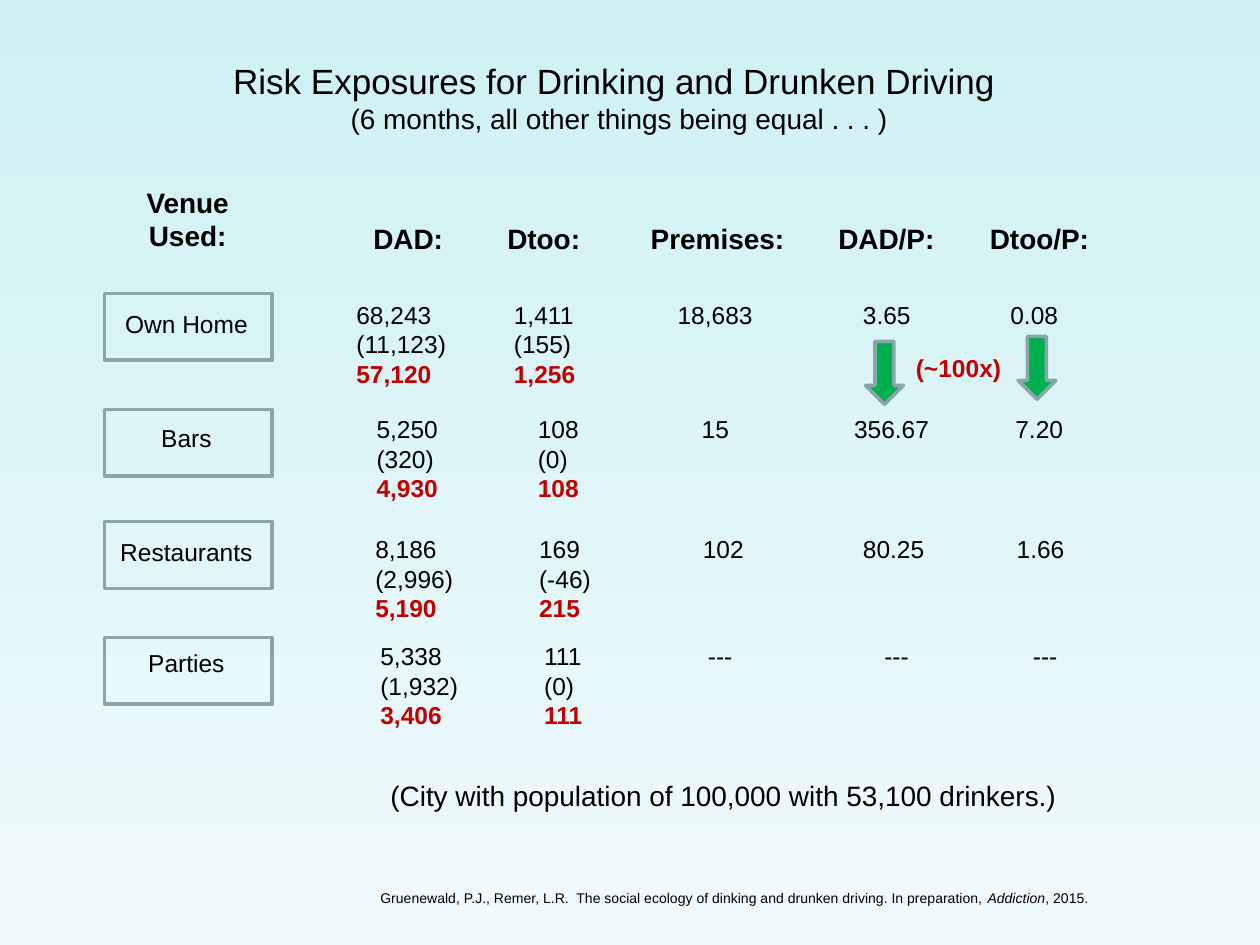
from pptx import Presentation
from pptx.dml.color import RGBColor
from pptx.enum.shapes import MSO_SHAPE as Shape
from pptx.enum.text import MSO_ANCHOR as Anchor, MSO_AUTO_SIZE as AutoSize, PP_ALIGN as Align
from pptx.util import Inches, Pt

BLACK, RED, GREEN, GREY = "000000", "C00000", "00B050", "8AA6A8"


def rgb(color):
    return RGBColor.from_string(color)


def write(box, text, size=14, color=BLACK, bold=False, italic=False,
          align=Align.LEFT, spacing=None, wrap=False, same_line=False):
    """Append text to a box, in a new paragraph unless same_line is set."""
    frame = box.text_frame
    frame.word_wrap = wrap
    frame.auto_size = AutoSize.SHAPE_TO_FIT_TEXT
    para = frame.paragraphs[-1]
    if para.runs and not same_line:
        para = frame.add_paragraph()
    para.alignment = align
    para.space_before = Pt(0)
    if spacing:
        para.line_spacing = Pt(spacing)
    span = para.add_run()
    span.text = text
    span.font.name = "Arial"
    span.font.size = Pt(size)
    span.font.bold = bold
    span.font.italic = italic
    span.font.color.rgb = rgb(color)


deck = Presentation()
deck.slide_width, deck.slide_height = Inches(10), Inches(7.5)
page = deck.slides.add_slide(deck.slide_layouts[5])
shapes = page.shapes

backdrop = page.background.fill
backdrop.gradient()
backdrop.gradient_angle = 270
for stop, color in zip(backdrop.gradient_stops, ["CEF1F4", "EFFAFB"]):
    stop.color.rgb = rgb(color)

title = shapes.title
title.left, title.top = Inches(1.75), Inches(0.42)
title.width, title.height = Inches(6.33), Inches(0.71)
title.text_frame.vertical_anchor = Anchor.TOP
write(title, "Risk Exposures for Drinking and Drunken Driving", size=20, wrap=True)
write(title, "(6 months, all other things being equal . . . )", size=16,
      align=Align.CENTER, wrap=True)

# Column headings: text, left, width
headings = [("DAD:", 2.86, 0.76), ("Dtoo:", 3.92, 0.79), ("Premises:", 5.06, 1.27),
            ("DAD/P:", 6.55, 0.97), ("Dtoo/P:", 7.75, 1)]
for text, left, width in headings:
    heading = shapes.add_textbox(Inches(left), Inches(1.71), Inches(width), Inches(0.37))
    write(heading, text, size=16, bold=True, align=Align.CENTER)

venue_heading = shapes.add_textbox(Inches(1.06), Inches(1.42), Inches(0.86), Inches(0.64))
for text in ["Venue", "Used:"]:
    write(venue_heading, text, size=16, bold=True, align=Align.CENTER)

# Venue, tops of frame, label and figures, then the figures: left, width, lines
venues = [
    ("Own Home", 2.33, 2.43, 2.33, [
        (2.73, 0.91, ["68,243", "(11,123)", "57,120"]),
        (3.98, 0.69, ["1,411", "(155)", "1,256"]),
        (5.28, 0.8, ["18,683"]), (6.75, 0.58, ["3.65"]), (7.92, 0.58, ["0.08"])]),
    ("Bars", 3.25, 3.33, 3.24, [
        (2.89, 0.69, ["5,250", "(320)", "4,930"]),
        (4.17, 0.53, ["108", "(0)", "108"]),
        (5.47, 0.42, ["15"]), (6.68, 0.8, ["356.67"]), (7.96, 0.58, ["7.20"])]),
    ("Restaurants", 4.14, 4.24, 4.19, [
        (2.88, 0.82, ["8,186", "(2,996)", "5,190"]),
        (4.18, 0.61, ["169", "(-46)", "215"]),
        (5.48, 0.53, ["102"]), (6.75, 0.69, ["80.25"]), (7.97, 0.58, ["1.66"])]),
    ("Parties", 5.06, 5.12, 5.04, [
        (2.92, 0.82, ["5,338", "(1,932)", "3,406"]),
        (4.22, 0.51, ["111", "(0)", "111"]),
        (5.52, 0.4, ["---"]), (6.92, 0.4, ["---"]), (8.1, 0.4, ["---"])]),
]
outlines = [(Shape.DOWN_ARROW, 6.87, 2.71, 0.3, 0.5, GREEN),
            (Shape.DOWN_ARROW, 8.08, 2.67, 0.3, 0.5, GREEN)]
outlines += [(Shape.RECTANGLE, 0.83, venue[1], 1.33, 0.53, None) for venue in venues]
for kind, left, top, width, height, color in outlines:
    outline = shapes.add_shape(kind, Inches(left), Inches(top), Inches(width), Inches(height))
    outline.shadow.inherit = False
    outline.line.color.rgb = rgb(GREY)
    outline.line.width = Pt(2)
    if color:
        outline.fill.solid()
        outline.fill.fore_color.rgb = rgb(color)
    else:
        outline.fill.background()

for venue, _, label_top, figures_top, figures in venues:
    label = shapes.add_textbox(Inches(0.85), Inches(label_top), Inches(1.26), Inches(0.31))
    write(label, venue, align=Align.CENTER, spacing=15)
    for left, width, lines in figures:
        height = 0.81 if len(lines) == 3 else 0.34
        figure = shapes.add_textbox(Inches(left), Inches(figures_top),
                                    Inches(width), Inches(height))
        for number, text in enumerate(lines):
            is_net = number == 2
            write(figure, text, color=RED if is_net else BLACK, bold=is_net)

ratio = shapes.add_textbox(Inches(7.17), Inches(2.75), Inches(0.88), Inches(0.34))
write(ratio, "(~100x)", color=RED, bold=True)

city_note = shapes.add_textbox(Inches(3), Inches(6.13), Inches(5.55), Inches(0.37))
write(city_note, "(City with population of 100,000 with 53,100 drinkers.)", size=16)

citation = shapes.add_textbox(Inches(2.92), Inches(7.01), Inches(6.92), Inches(0.24))
write(citation, "Gruenewald, P.J., Remer, L.R.  The social ecology of dinking and drunken "
      "driving. In preparation, ", size=8, wrap=True)
write(citation, "Addiction", size=8, italic=True, wrap=True, same_line=True)
write(citation, ", 2015.", size=8, wrap=True, same_line=True)

deck.save("out.pptx")
